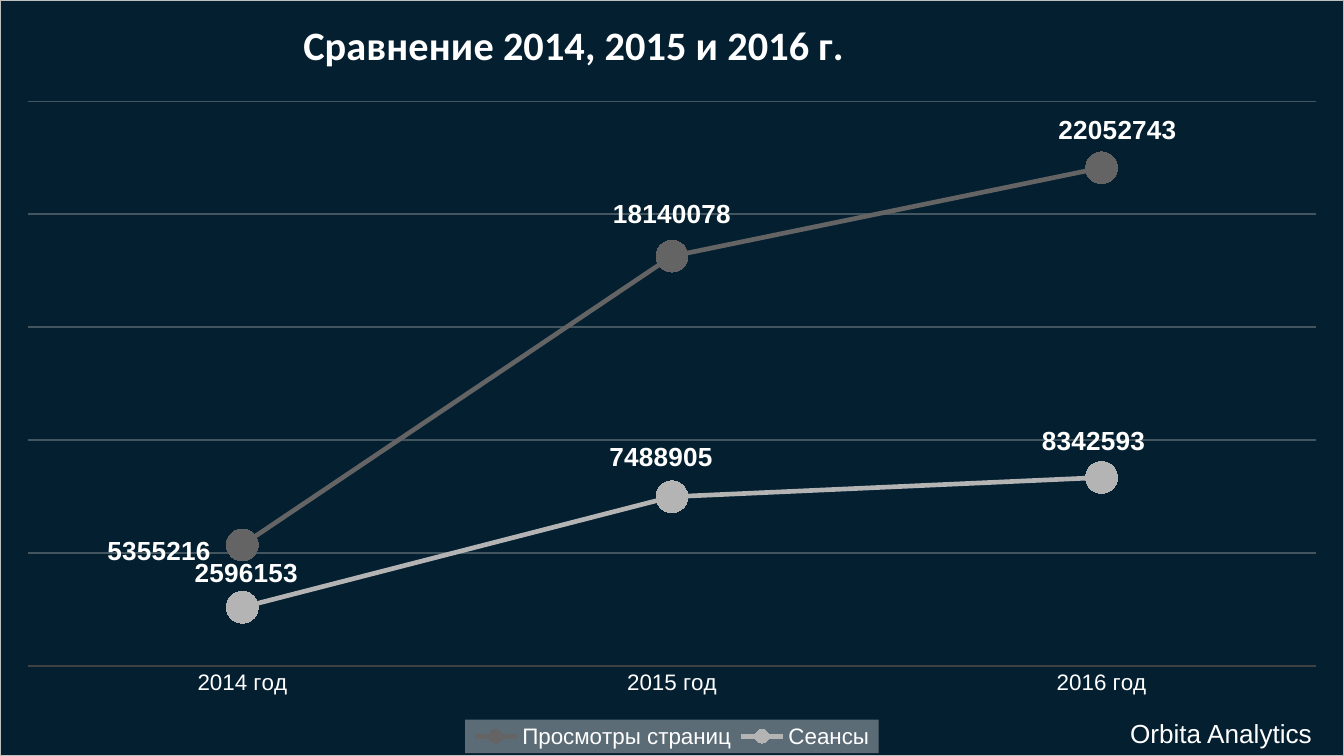
from lxml import etree
from pptx import Presentation
from pptx.chart.data import CategoryChartData
from pptx.dml.color import RGBColor
from pptx.enum import chart as c, text as t
from pptx.oxml import parse_xml
from pptx.oxml.ns import nsdecls, qn
from pptx.util import Inches, Pt

ORANGE = RGBColor(0xFB, 0x68, 0x2D)
NAVY = RGBColor(0x04, 0x1F, 0x30)
WHITE = RGBColor(0xFF, 0xFF, 0xFF)
BLACK = RGBColor(0, 0, 0)
BORDER = RGBColor(0xBF, 0xBF, 0xBF)
GRID = RGBColor(0x43, 0x56, 0x60)
AXIS = RGBColor(0x40, 0x40, 0x40)
LEGEND = RGBColor(0x5C, 0x6C, 0x77)
DARK_GREY = RGBColor(0x64, 0x64, 0x64)
LIGHT_GREY = RGBColor(0xB4, 0xB4, 0xB4)

TITLE = "Сравнение 2014, 2015 и 2016 г."
SOURCE = "Orbita Analytics"
YEARS = ["2014 год", "2015 год", "2016 год"]
SERIES = [
    ("Просмотры страниц", [5355216, 18140078, 22052743], DARK_GREY,
     [(-0.62, 0.05), (0, -0.31), (0.12, -0.28)]),
    ("Сеансы", [2596153, 7488905, 8342593], LIGHT_GREY,
     [(0.03, -0.25), (-0.08, -0.29), (-0.06, -0.27)]),
]
WIDTH = 10
HEIGHT = WIDTH * 9 / 16
FORMATS = {
    "base": {"name": "Arial", "size": Pt(10), "color": BLACK},
    "title": {"name": "Calibri", "size": Pt(21.6), "bold": True, "color": WHITE},
    "label": {"name": "Arial", "size": Pt(14), "bold": True, "color": WHITE},
    "axis": {"name": "Arial", "size": Pt(12), "color": WHITE},
    "source": {"name": "Arial", "size": Pt(14), "color": WHITE},
}


def set_font(font, style):
    for key, value in FORMATS[style].items():
        if key == "color":
            font.color.rgb = value
        else:
            setattr(font, key, value)


def set_line(line, color, width):
    line.color.rgb = color
    line.width = Pt(width)


def paint(parent, fill, border=None):
    outline = ""
    if border is not None:
        outline = f'<a:ln w="9525"><a:solidFill><a:srgbClr val="{border}"/></a:solidFill></a:ln>'
    parent.xpath("./c:txPr")[0].addprevious(parse_xml(
        f'<c:spPr {nsdecls("c", "a")}><a:solidFill><a:srgbClr val="{fill}"/>'
        f'</a:solidFill>{outline}</c:spPr>'))


def place(parent, index, left, top, width=None, height=None, edge=True, inner=False):
    for old in parent.xpath("./c:layout"):
        parent.remove(old)
    layout = etree.Element(qn("c:layout"))
    manual = etree.SubElement(layout, qn("c:manualLayout"))
    values = [("layoutTarget", "inner")] if inner else []
    if edge:
        values += [("xMode", "edge"), ("yMode", "edge")]
    values += [("x", left / WIDTH), ("y", top / HEIGHT)]
    if width:
        values += [("w", width / WIDTH), ("h", height / HEIGHT)]
    for tag, value in values:
        etree.SubElement(manual, qn(f"c:{tag}")).set("val", str(value))
    parent.insert(index, layout)


presentation = Presentation()
presentation.slide_width, presentation.slide_height = Inches(WIDTH), Inches(HEIGHT)
slide = presentation.slides.add_slide(presentation.slide_layouts[6])
slide.background.fill.solid()
slide.background.fill.fore_color.rgb = ORANGE

data = CategoryChartData()
data.categories = YEARS
for name, values, _, _ in SERIES:
    data.add_series(name, values)
chart = slide.shapes.add_chart(
    c.XL_CHART_TYPE.LINE_MARKERS, 0, 0, Inches(WIDTH), Inches(HEIGHT), data).chart
set_font(chart.font, "base")
paint(chart.element, NAVY, BORDER)

chart.has_title = True
chart.chart_title.text_frame.text = TITLE
set_font(chart.chart_title.text_frame.paragraphs[0].runs[0].font, "title")
place(chart.element.xpath("./c:chart/c:title")[0], 1, 2.2, 0.06)
place(chart.element.xpath(".//c:plotArea")[0], 0, 0.2, 0.75, 9.6, 4.21, inner=True)

chart.has_legend = True
chart.legend.position = c.XL_LEGEND_POSITION.BOTTOM
chart.legend.include_in_layout = False
set_font(chart.legend.font, "axis")
legend = chart.element.xpath(".//c:legend")[0]
place(legend, 1, 3.46, 5.36, 3.08, 0.25)
paint(legend, LEGEND)

category_axis, value_axis = chart.category_axis, chart.value_axis
category_axis.major_tick_mark = c.XL_TICK_MARK.NONE
set_font(category_axis.tick_labels.font, "axis")
set_line(category_axis.format.line, AXIS, 1.5)
value_axis.minimum_scale, value_axis.maximum_scale = 0, 25000000
value_axis.major_unit = 5000000
value_axis.visible = False
value_axis.has_major_gridlines = True
set_line(value_axis.major_gridlines.format.line, GRID, 0.75)

plot = chart.plots[0]
plot.vary_by_categories = False
for series, (_, _, color, offsets) in zip(plot.series, SERIES):
    series.smooth = False
    set_line(series.format.line, color, 2.5)
    marker = series.marker
    marker.style, marker.size = c.XL_MARKER_STYLE.CIRCLE, 17
    marker.format.fill.solid()
    marker.format.fill.fore_color.rgb = color
    marker.format.line.color.rgb = color
    labels = series.data_labels
    labels.show_value = True
    labels.position = c.XL_LABEL_POSITION.CENTER
    set_font(labels.font, "label")
    for index in range(len(offsets)):
        label = series.points[index].data_label
        label.position = c.XL_LABEL_POSITION.CENTER
        set_font(label.font, "label")
    for element, (shift_x, shift_y) in zip(labels._element.xpath("./c:dLbl"), offsets):
        place(element, 1, shift_x, shift_y, edge=False)
    for leader in labels._element.xpath("./c:showLeaderLines"):
        leader.set("val", "0")

source = slide.shapes.add_textbox(Inches(8.31), Inches(5.29), Inches(1.68), Inches(0.34))
frame = source.text_frame
frame.word_wrap = False
frame.auto_size = t.MSO_AUTO_SIZE.SHAPE_TO_FIT_TEXT
run = frame.paragraphs[0].add_run()
run.text = SOURCE
set_font(run.font, "source")

presentation.save("out.pptx")
